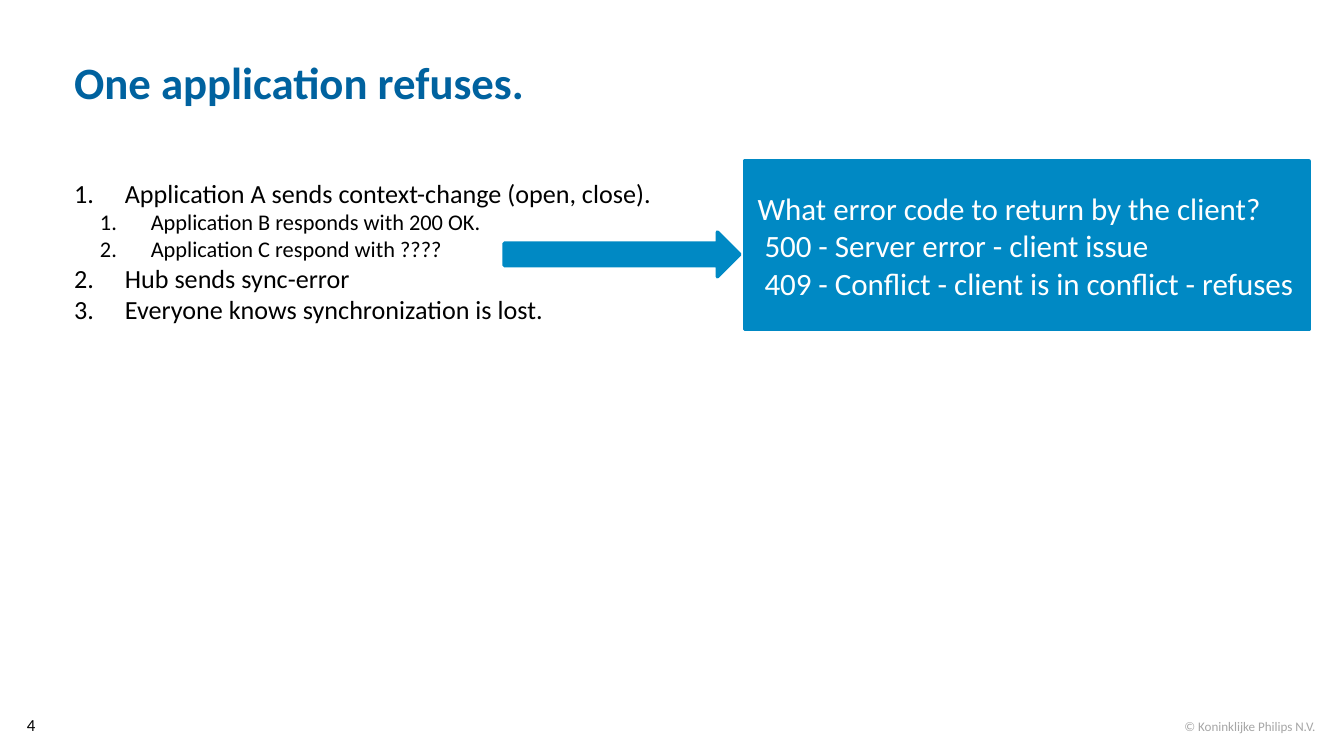
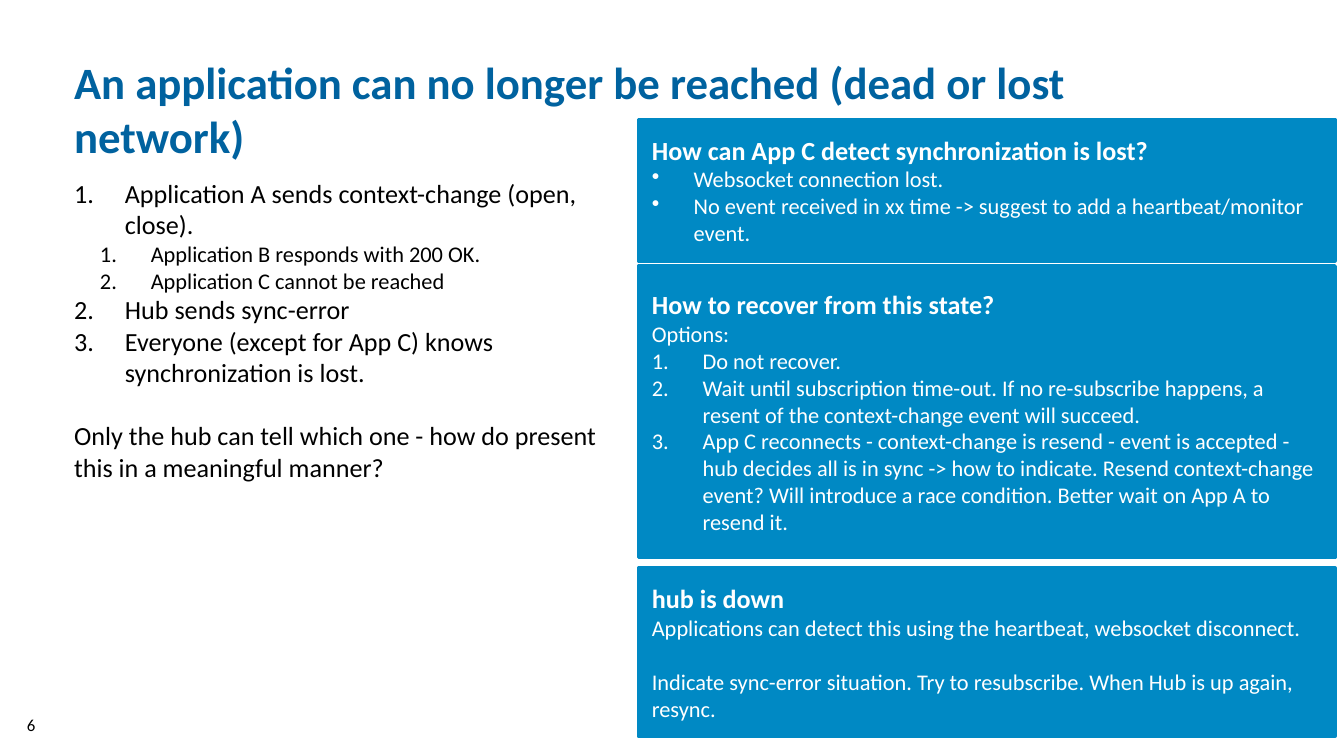
from dataclasses import dataclass

from lxml.etree import SubElement
from pptx import Presentation
from pptx.dml.color import RGBColor
from pptx.enum.shapes import MSO_SHAPE
from pptx.enum.text import MSO_ANCHOR, PP_ALIGN
from pptx.oxml.ns import qn
from pptx.util import Cm, Pt


@dataclass(frozen=True)
class Theme:
    font: str = "Calibri"
    navy: str = "00629F"
    blue: str = "0089C4"
    black: str = "000000"
    white: str = "FFFFFF"
    gray: str = "A6A6A6"
    title: float = 24
    large: float = 16.6
    main: float = 14
    small: float = 12
    page: float = 9
    legal: float = 7


THEME = Theme()
NUMBER, BULLET = "number", "bullet"
HANG = {NUMBER: 0.96, BULLET: 0.79}  # hanging indents in cm
STEP = 0.49  # extra indent of a sub-item in cm


def set_mark(para, mark, level):
    """Give a paragraph a number or bullet with a hanging indent."""
    props = para._p.get_or_add_pPr()
    hang = HANG[mark]
    props.set("marL", str(Cm(hang + level * STEP)))
    props.set("indent", str(-Cm(hang)))
    if mark == NUMBER:
        SubElement(props, qn("a:buAutoNum"), type="arabicPeriod")
    else:
        SubElement(props, qn("a:buChar"), char="•")


def write(frame, text, *, size=THEME.main, color=THEME.black, bold=False,
          mark=None, level=0, inset=0, gap=0, align=PP_ALIGN.LEFT):
    """Add a paragraph; inset (cm) moves only its first line."""
    para = frame.paragraphs[0]
    if para.runs:
        para = frame.add_paragraph()
    para.level = level
    if mark:
        set_mark(para, mark, level)
    elif inset:
        para._p.get_or_add_pPr().set("indent", str(Cm(inset)))
    para.alignment = align
    if gap:
        para.space_before = Pt(gap)
    run = para.add_run()
    run.text = text
    font = run.font
    font.name, font.size, font.bold = THEME.font, Pt(size), bold
    font.color.rgb = RGBColor.from_string(color)


def add_text(slide, left, top, width, height, anchor=MSO_ANCHOR.TOP):
    frame = slide.shapes.add_textbox(
        Cm(left), Cm(top), Cm(width), Cm(height)).text_frame
    frame.word_wrap = True
    frame.vertical_anchor = anchor
    frame.margin_left = frame.margin_right = 0
    frame.margin_top = frame.margin_bottom = 0
    return frame


def add_solid(slide, kind, left, top, width, height):
    shape = slide.shapes.add_shape(
        kind, Cm(left), Cm(top), Cm(width), Cm(height))
    shape.shadow.inherit = False
    blue = RGBColor.from_string(THEME.blue)
    shape.fill.solid()
    shape.fill.fore_color.rgb = blue
    shape.line.color.rgb = blue
    shape.line.width = Pt(2)
    return shape


def add_panel(slide, left, top, width, height, lines, size=THEME.small):
    """Add a blue box holding (text, format) pairs."""
    box = add_solid(slide, MSO_SHAPE.RECTANGLE, left, top, width, height)
    frame = box.text_frame
    frame.word_wrap = True
    frame.vertical_anchor = MSO_ANCHOR.MIDDLE
    for text, style in lines:
        write(frame, text, **{"size": size, "color": THEME.white, **style})


def add_slide(deck, title, page):
    slide = deck.slides.add_slide(deck.slide_layouts[6])
    write(add_text(slide, 1.4, 1.04, 20.9, 2.01), title,
          size=THEME.title, color=THEME.navy, bold=True)
    write(add_text(slide, 0.51, 13.51, 0.56, 0.41), str(page),
          size=THEME.page)
    return slide


def add_steps(slide, width, reply, result):
    """Add the numbered flow that both slides tell."""
    frame = add_text(slide, 1.4, 3.35, width, 9.68)
    steps = [
        ("Application A sends context-change (open, close).", 0),
        ("Application B responds with 200 OK.", 1),
        (reply, 1),
        ("Hub sends sync-error", 0),
        (result, 0),
    ]
    for text, level in steps:
        write(frame, text, mark=NUMBER, level=level,
              size=THEME.small if level else THEME.main)
    return frame


def add_refuse(deck):
    slide = add_slide(deck, "One application refuses.", 4)
    legal = add_text(slide, 21.89, 13.11, 2.97, 0.76, MSO_ANCHOR.BOTTOM)
    write(legal, "© Koninklijke Philips N.V.", size=THEME.legal,
          color=THEME.gray, align=PP_ALIGN.RIGHT)
    add_steps(slide, 22.61, "Application C respond with ????",
              "Everyone knows synchronization is lost.")
    code = {"inset": 0.13}
    add_panel(slide, 14.07, 3.05, 10.67, 3.18, [
        ("What error code to return by the client?", {}),
        ("500 - Server error - client issue", code),
        ("409 - Conflict - client is in conflict - refuses", code),
    ], size=THEME.large)
    add_solid(slide, MSO_SHAPE.RIGHT_ARROW, 9.53, 4.39, 4.45, 0.84)


def add_lost(deck):
    slide = add_slide(
        deck, "An application can no longer be reached "
        "(dead or lost network)", 6)
    frame = add_steps(
        slide, 10.67, "Application C cannot be reached",
        "Everyone (except for App C) knows synchronization is lost.")
    write(frame, "Only the hub can tell which one - how do present this "
          "in a meaningful manner?", gap=17)

    head = {"size": THEME.main, "bold": True}
    item, step = {"mark": BULLET}, {"mark": NUMBER}
    panels = [
        (2.26, 2.67, [
            ("How can App C detect synchronization is lost?", head),
            ("Websocket connection lost.", item),
            ("No event received in xx time -> suggest to add a "
             "heartbeat/monitor event.", item),
        ]),
        (5.03, 5.51, [
            ("How to recover from this state?", head),
            ("Options:", {}),
            ("Do not recover.", step),
            ("Wait until subscription time-out. If no re-subscribe happens, "
             "a resent of the context-change event will succeed.", step),
            ("App C reconnects - context-change is resend - event is "
             "accepted - hub decides all is in sync -> how to indicate. "
             "Resend context-change event? Will introduce a race condition. "
             "Better wait on App A to resend it.", step),
        ]),
        (10.74, 3.18, [
            ("hub is down", head),
            ("Applications can detect this using the heartbeat, "
             "websocket disconnect.", {}),
            ("Indicate sync-error situation. Try to resubscribe. When Hub "
             "is up again, resync.", {"gap": 14.6}),
        ]),
    ]
    for top, height, lines in panels:
        add_panel(slide, 12.07, top, 13.16, height, lines)


def main():
    deck = Presentation()
    deck.slide_width, deck.slide_height = Cm(25.4), Cm(14.29)
    add_refuse(deck)
    add_lost(deck)
    deck.save("out.pptx")


if __name__ == "__main__":
    main()
